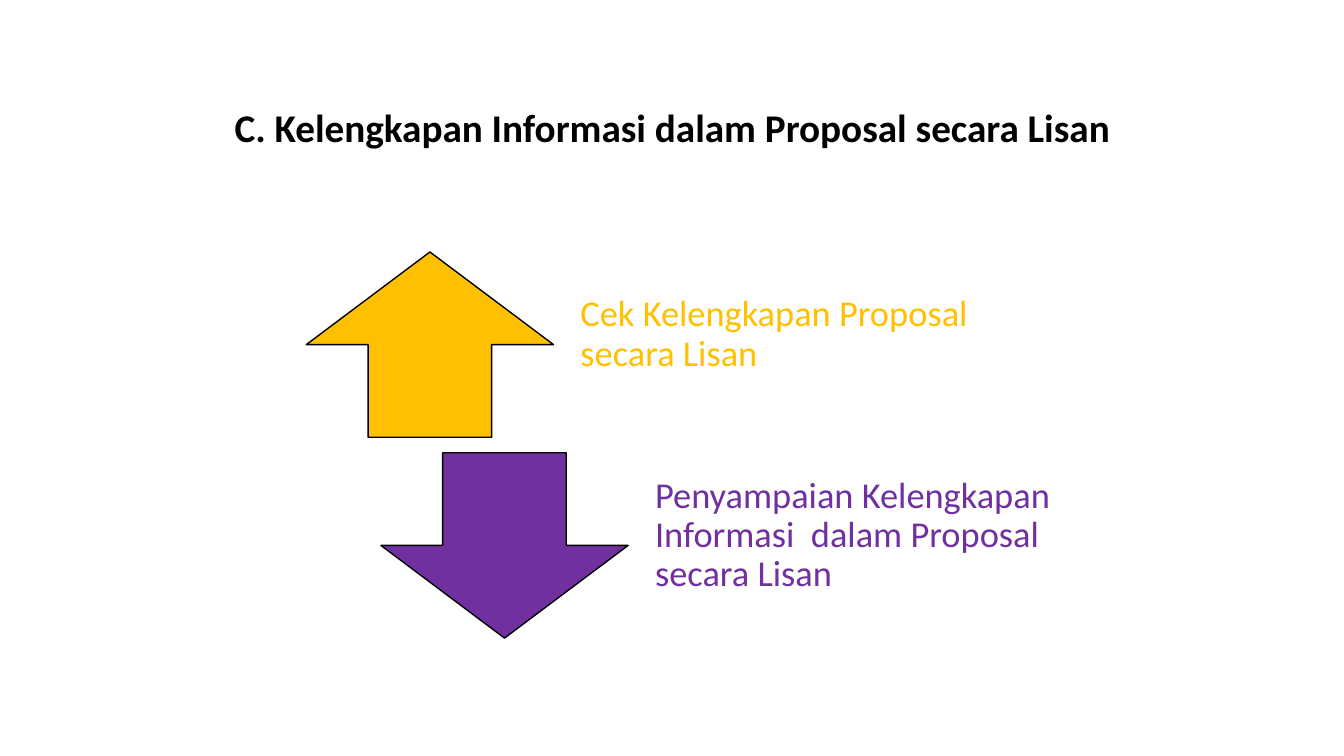
from pptx import Presentation
from pptx.dml.color import RGBColor
from pptx.enum.shapes import MSO_SHAPE
from pptx.enum.text import MSO_ANCHOR, PP_ALIGN
from pptx.util import Cm, Pt

COLORS = {"black": "000000", "gold": "FFC000", "purple": "7030A0"}


class Deck:
    """Holds the style and the current slide."""

    font = "Calibri"

    def __init__(self):
        self.prs = Presentation()
        self.prs.slide_width, self.prs.slide_height = Cm(33.87), Cm(19.05)
        self.slide = self.prs.slides.add_slide(self.prs.slide_layouts[5])

    def color(self, name):
        return RGBColor.from_string(COLORS[name])

    def set_text(self, frame, text, size, color, align, bold=False):
        frame.text = text
        frame.word_wrap = True
        frame.vertical_anchor = MSO_ANCHOR.MIDDLE
        para = frame.paragraphs[0]
        para.alignment = align
        para.line_spacing = 0.9
        font = para.runs[0].font
        font.name, font.size, font.bold = self.font, Pt(size), bold
        font.color.rgb = self.color(color)

    def title(self, text, left, top, width, height):
        shape = self.slide.shapes.title
        shape.left, shape.top = Cm(left), Cm(top)
        shape.width, shape.height = Cm(width), Cm(height)
        self.set_text(shape.text_frame, text, 28, "black", PP_ALIGN.CENTER, bold=True)

    def arrow(self, kind, color, left, top, width, height):
        shape = self.slide.shapes.add_shape(
            kind, Cm(left), Cm(top), Cm(width), Cm(height))
        shape.shadow.inherit = False
        shape.fill.solid()
        shape.fill.fore_color.rgb = self.color(color)
        shape.line.color.rgb = self.color("black")
        shape.line.width = Pt(1)

    def label(self, text, color, left, top, width, height):
        box = self.slide.shapes.add_textbox(
            Cm(left), Cm(top), Cm(width), Cm(height))
        frame = box.text_frame
        frame.margin_left = frame.margin_right = frame.margin_bottom = Cm(0.5)
        frame.margin_top = 0
        self.set_text(frame, text, 26, color, PP_ALIGN.LEFT)


def main():
    deck = Deck()

    # Heading
    deck.title("C. Kelengkapan Informasi dalam Proposal secara Lisan",
               5.51, 1.4, 22.86, 3.76)

    # Opposed arrows, each with its label at the right
    items = [
        (MSO_SHAPE.UP_ARROW, "gold", "Cek Kelengkapan Proposal secara Lisan"),
        (MSO_SHAPE.DOWN_ARROW, "purple",
         "Penyampaian Kelengkapan Informasi  dalam Proposal secara Lisan"),
    ]
    for i, (kind, color, text) in enumerate(items):
        left, top = 7.72 + 1.88 * i, 6.35 + 5.06 * i
        deck.arrow(kind, color, left, top, 6.23, 4.67)
        deck.label(text, color, left + 6.41, top, 11.33, 4.67)

    deck.prs.save("out.pptx")


if __name__ == "__main__":
    main()
